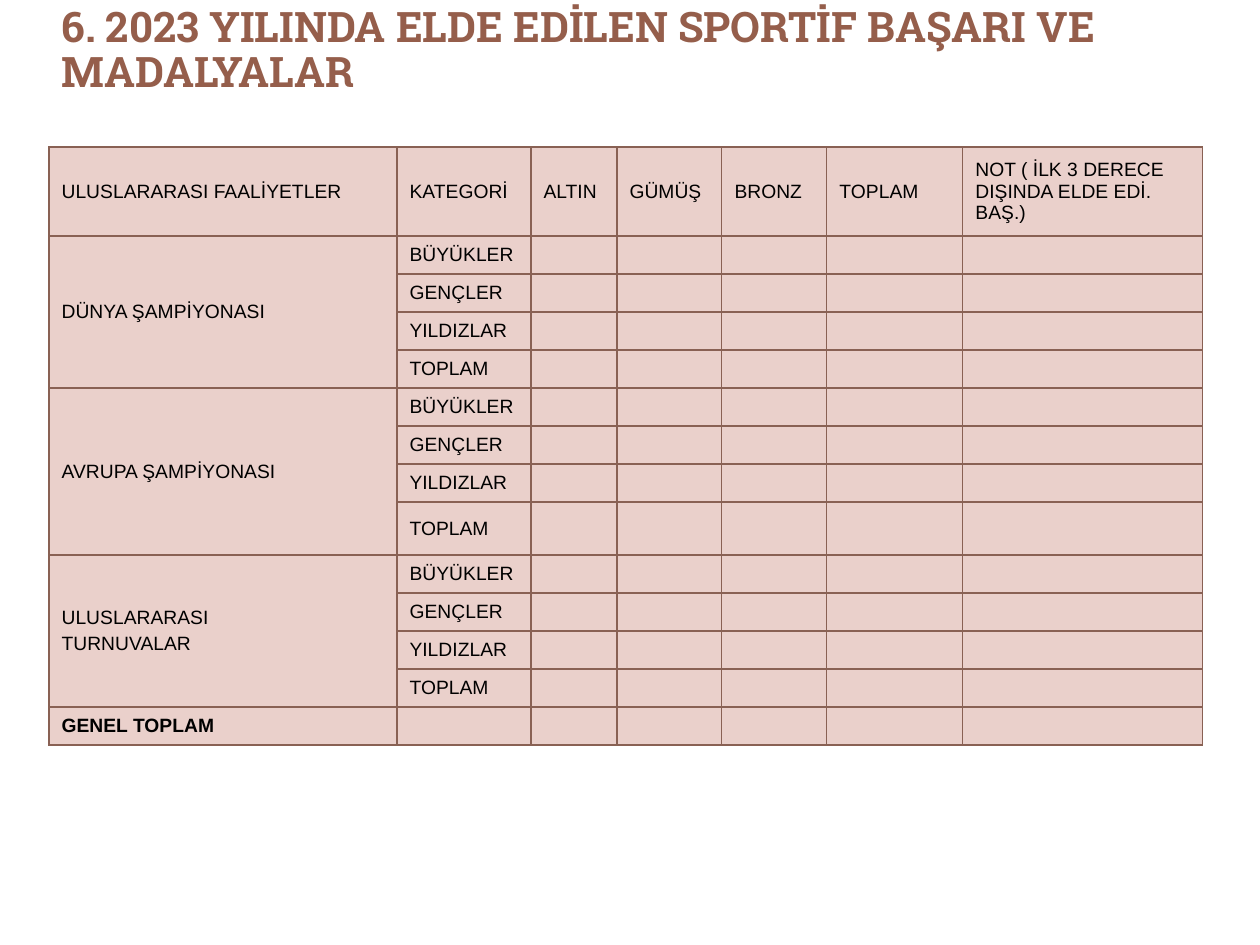
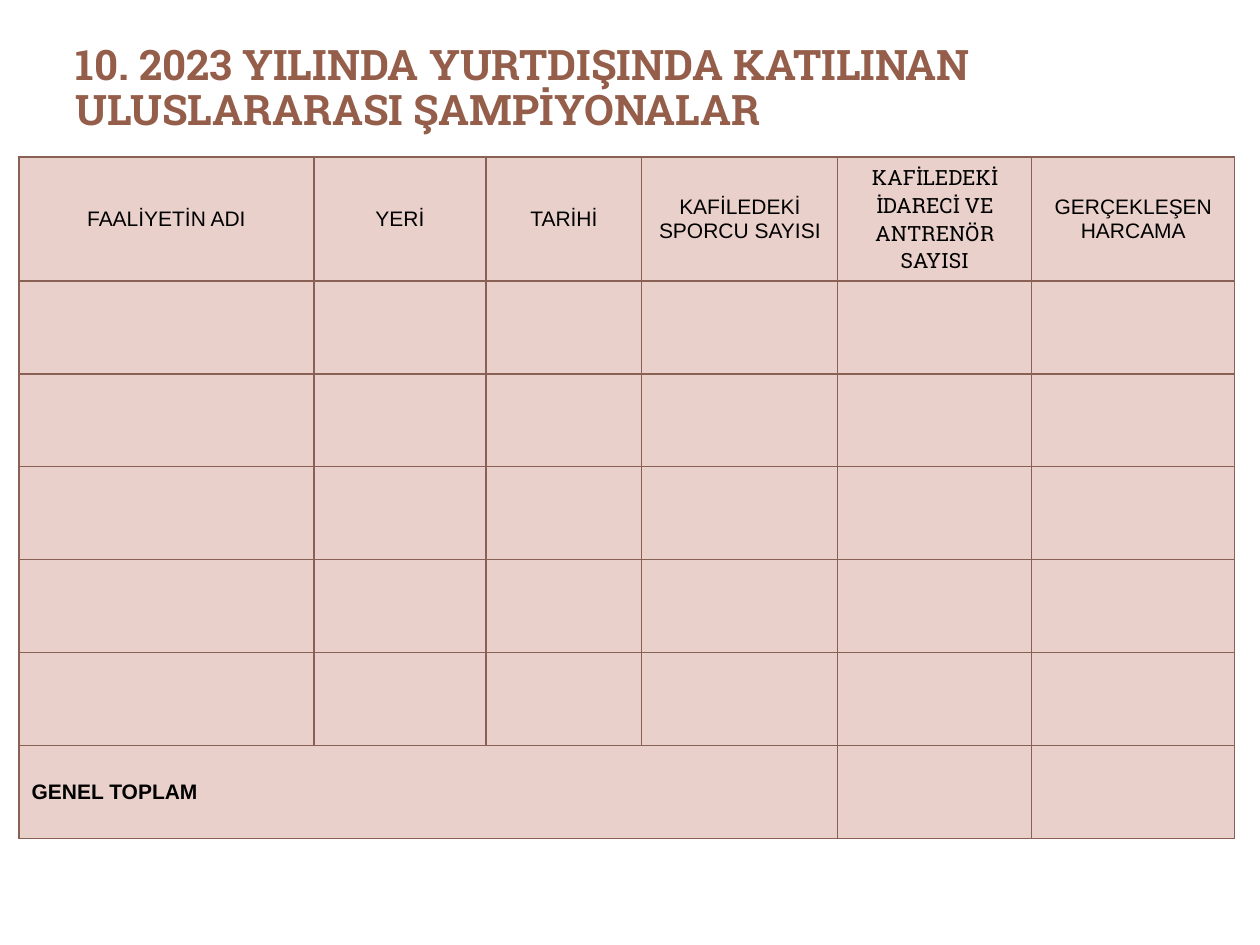
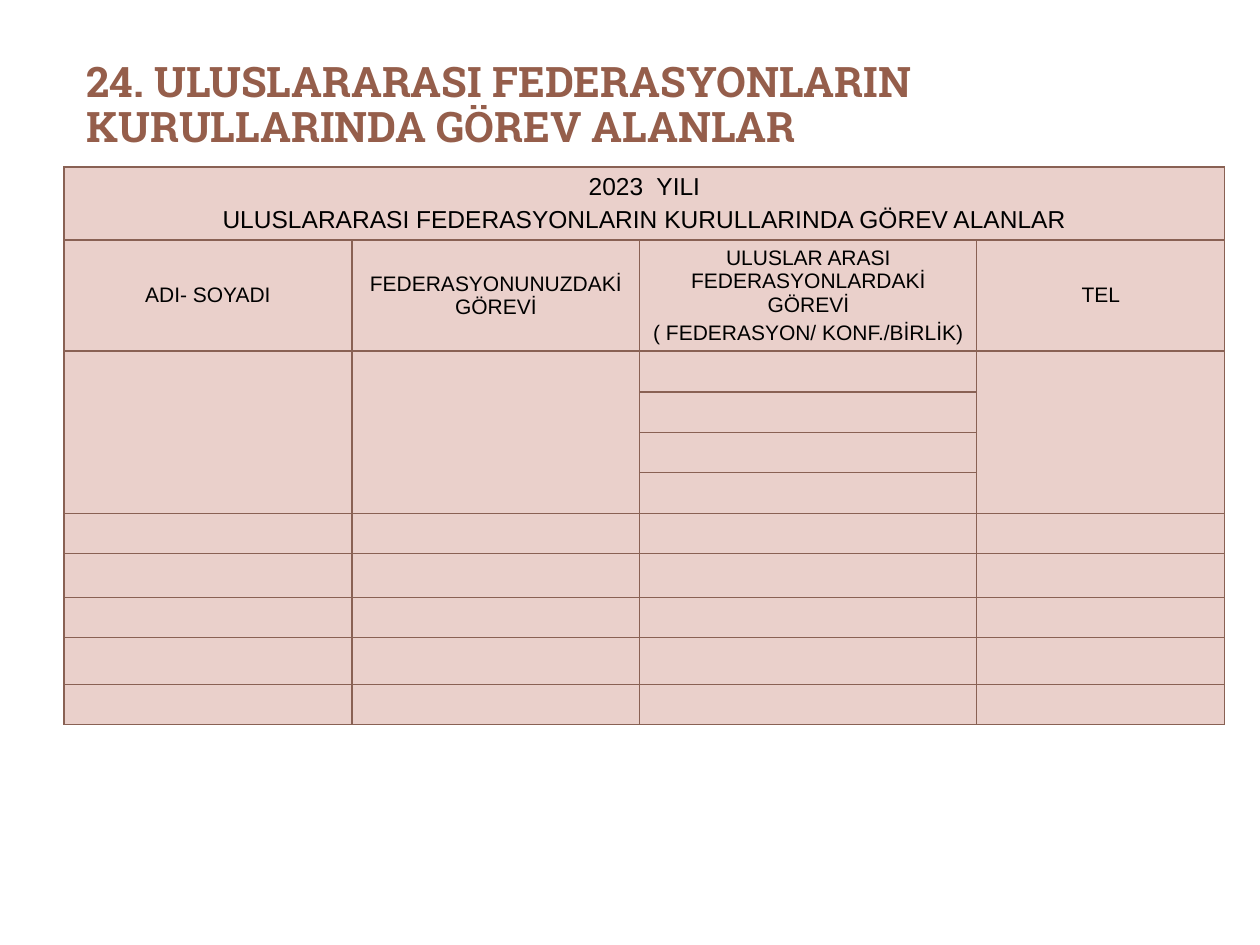
from dataclasses import dataclass

from lxml.etree import SubElement
from pptx import Presentation
from pptx.dml.color import RGBColor as RGB
from pptx.enum.text import MSO_ANCHOR as Anchor, MSO_AUTO_SIZE as Fit, PP_ALIGN as Align
from pptx.oxml.ns import qn
from pptx.util import Emu, Pt

PX = 914400 / 126  # EMU in one px


@dataclass(frozen=True)
class Theme:
    title: str = "955E4B"
    text: str = "000000"
    fill: str = "EAD0CB"
    line: str = "896154"
    head: str = "Roboto Slab"
    body: str = "Arial"
    big: int = 24
    band: int = 14
    mid: int = 12
    small: int = 11
    rule: float = 0.75


T = Theme()


def px(n):
    return Emu(round(n * PX))


def frame(cell, size):
    """Fill and border a cell; size keeps an empty row from growing."""
    cell.fill.solid()
    cell.fill.fore_color.rgb = RGB.from_string(T.fill)
    cell.vertical_anchor = Anchor.MIDDLE
    props = cell._tc.get_or_add_tcPr()
    for spot, side in enumerate(("lnL", "lnR", "lnT", "lnB")):
        line = SubElement(props, qn(f"a:{side}"), w=str(Pt(T.rule)))
        SubElement(SubElement(line, qn("a:solidFill")), qn("a:srgbClr"), val=T.line)
        props.insert(spot, line)
    if not cell.text:
        SubElement(cell.text_frame.paragraphs[0]._p, qn("a:endParaRPr"), sz=str(size * 100))


groups = ["DÜNYA ŞAMPİYONASI", "AVRUPA ŞAMPİYONASI", "ULUSLARARASI\nTURNUVALAR"]
ages = ["BÜYÜKLER", "GENÇLER", "YILDIZLAR", "TOPLAM"]
medals = [["ULUSLARARASI FAALİYETLER", "KATEGORİ", "ALTIN", "GÜMÜŞ", "BRONZ", "TOPLAM",
           "NOT ( İLK 3 DERECE DIŞINDA ELDE EDİ. BAŞ.)"]]
for group in groups:
    for i, age in enumerate(ages):
        medals.append(["" if i else group, age])
medals.append(["GENEL TOPLAM"])

trips = [["FAALİYETİN ADI", "YERİ", "TARİHİ", "KAFİLEDEKİ SPORCU SAYISI",
          "KAFİLEDEKİ İDARECİ VE ANTRENÖR SAYISI", "GERÇEKLEŞEN HARCAMA"],
         *[[]] * 5, ["GENEL TOPLAM"]]

boards = [["2023  YILI\nULUSLARARASI FEDERASYONLARIN KURULLARINDA GÖREV ALANLAR"],
          ["ADI- SOYADI", "FEDERASYONUNUZDAKİ GÖREVİ",
           "ULUSLAR ARASI FEDERASYONLARDAKİ GÖREVİ\n( FEDERASYON/ KONF./BİRLİK)", "TEL"]]

# spans: first row, first column, last row, last column
slides = [
    dict(title="6. 2023 YILINDA ELDE EDİLEN SPORTİF BAŞARI VE MADALYALAR",
         box=(49, 0, 1123, 60), at=(49, 147), data=medals, size=T.small, align=Align.LEFT,
         cols=[348, 134, 86, 105, 105, 136, 240],
         rows=[89] + [38] * 7 + [53] + [38] * 5,
         spans=[(r, 0, r + 3, 0) for r in (1, 5, 9)]),
    dict(title="10. 2023 YILINDA YURTDIŞINDA KATILINAN ULUSLARARASI ŞAMPİYONALAR",
         box=(63, 38, 1134, 158), at=(19, 157), data=trips, size=T.mid, align=Align.CENTER,
         cols=[295, 172, 156, 196, 194, 203], rows=[124] + [93] * 6,
         spans=[(6, 0, 6, 3)], fonts={(0, 4): T.head}),
    dict(title="24. ULUSLARARASI FEDERASYONLARIN KURULLARINDA GÖREV ALANLAR",
         box=(74, 55, 1134, 158), at=(64, 167), data=boards, size=T.mid, align=Align.CENTER,
         cols=[288, 288, 337, 248], rows=[73, 111, 41, 41, 40, 41, 40, 44, 40, 47, 40],
         spans=[(0, 0, 0, 3)] + [(2, c, 5, c) for c in (0, 1, 3)],
         sizes={(0, 0): T.band}),
]

deck = Presentation()
deck.slide_width, deck.slide_height = px(1260), px(945)

for page in slides:
    slide = deck.slides.add_slide(deck.slide_layouts[5])
    title = slide.shapes.title
    title.left, title.top, title.width, title.height = map(px, page["box"])
    title.text = page["title"]
    body = title.text_frame
    for name, value in dict(word_wrap=True, auto_size=Fit.NONE,
                            vertical_anchor=Anchor.TOP).items():
        setattr(body, name, value)
    par = body.paragraphs[0]
    par.alignment, par.line_spacing = Align.LEFT, 0.9
    for name, value in dict(name=T.head, size=Pt(T.big), bold=True).items():
        setattr(par.runs[0].font, name, value)
    par.runs[0].font.color.rgb = RGB.from_string(T.title)

    cols, rows = page["cols"], page["rows"]
    spot = map(px, (*page["at"], sum(cols), sum(rows)))
    table = slide.shapes.add_table(len(rows), len(cols), *spot).table
    for col, width in zip(table.columns, cols):
        col.width = px(width)
    for row, height in zip(table.rows, rows):
        row.height = px(height)

    for r, line in enumerate(page["data"]):
        for c, text in enumerate(line):
            if not text:
                continue
            cell = table.cell(r, c)
            cell.text = text
            total = text == "GENEL TOPLAM"
            size = page.get("sizes", {}).get((r, c), page["size"])
            look = dict(name=page.get("fonts", {}).get((r, c), T.body),
                        size=Pt(size), bold=total)
            for i, par in enumerate(cell.text_frame.paragraphs):
                par.alignment = Align.LEFT if total else page["align"]
                if i:
                    par.space_before = Pt(size * 0.2)
                font = par.runs[0].font
                for name, value in look.items():
                    setattr(font, name, value)
                font.color.rgb = RGB.from_string(T.text)

    for cell in table.iter_cells():
        frame(cell, page["size"])
    for top, left, low, right in page["spans"]:
        table.cell(top, left).merge(table.cell(low, right))

deck.save("out.pptx")
